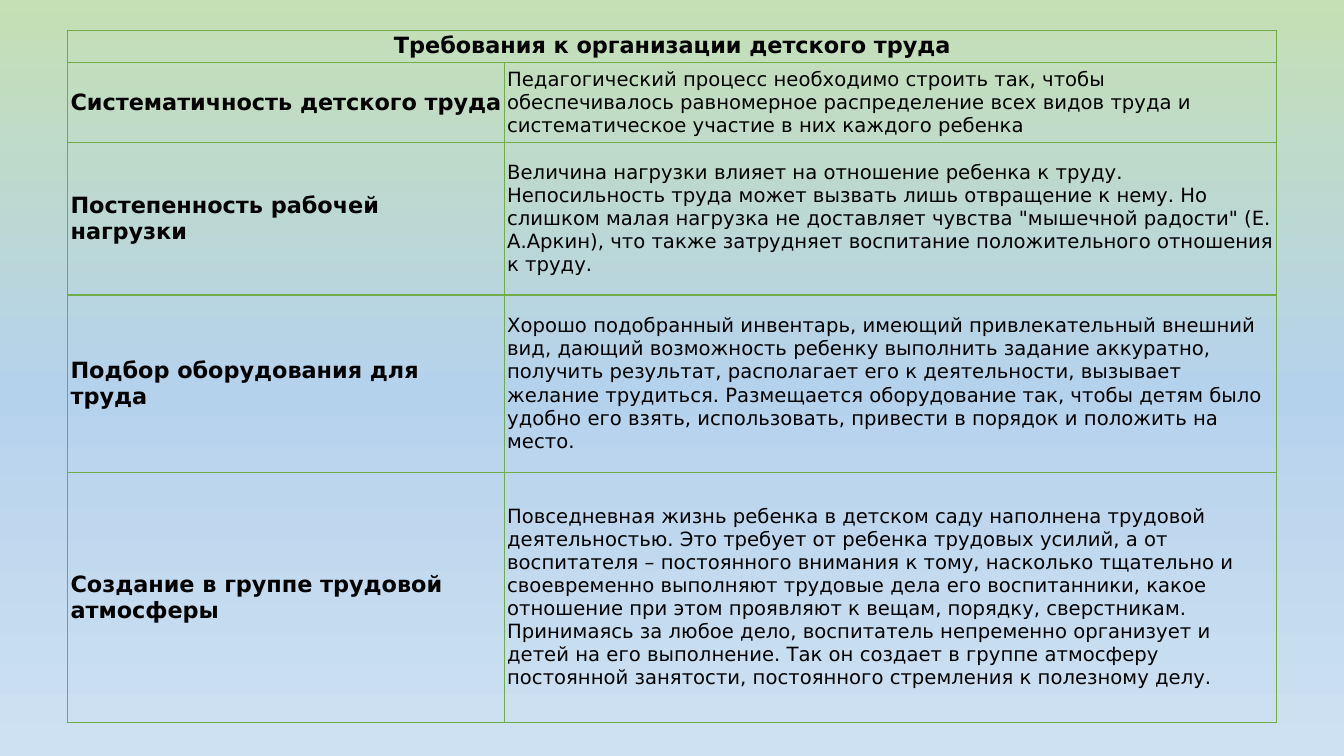
from copy import deepcopy

from pptx import Presentation
from pptx.dml.color import RGBColor
from pptx.enum.text import MSO_ANCHOR as Anchor, PP_ALIGN as Align
from pptx.oxml.ns import qn
from pptx.util import Inches, Pt
from lxml.etree import SubElement

FONT = "DejaVu Sans"
BORDER = "70AD47"
BACKGROUND = [(0, "C5E0B4"), (0.51, "B5D2EC"), (1, "CEE1F2")]
COLUMN_WIDTHS = [4.33, 7.66]
ROW_HEIGHTS = [0.31, 0.8, 1.51, 1.76, 2.48]

TITLE = "Требования к организации детского труда"
REQUIREMENTS = [
    ("Систематичность детского труда",
     "Педагогический процесс необходимо строить так, чтобы обеспечивалось "
     "равномерное распределение всех видов труда и систематическое участие "
     "в них каждого ребенка"),
    ("Постепенность рабочей нагрузки",
     "Величина нагрузки влияет на отношение ребенка к труду. Непосильность "
     "труда может вызвать лишь отвращение к нему. Но слишком малая нагрузка "
     "не доставляет чувства \"мышечной радости\" (Е. А.Аркин), что также "
     "затрудняет воспитание положительного отношения к труду."),
    ("Подбор оборудования для труда",
     "Хорошо подобранный инвентарь, имеющий привлекательный внешний вид, "
     "дающий возможность ребенку выполнить задание аккуратно, получить "
     "результат, располагает его к деятельности, вызывает желание трудиться. "
     "Размещается оборудование так, чтобы детям было удобно его взять, "
     "использовать, привести в порядок и положить на место."),
    ("Создание в группе трудовой атмосферы",
     "Повседневная жизнь ребенка в детском саду наполнена трудовой "
     "деятельностью. Это требует от ребенка трудовых усилий, а от воспитателя "
     "– постоянного внимания к тому, насколько тщательно и своевременно "
     "выполняют трудовые дела его воспитанники, какое отношение при этом "
     "проявляют к вещам, порядку, сверстникам. Принимаясь за любое дело, "
     "воспитатель непременно организует и детей на его выполнение. Так он "
     "создает в группе атмосферу постоянной занятости, постоянного стремления "
     "к полезному делу."),
]


def color(value):
    return RGBColor.from_string(value)


def paint_background(page):
    fill = page.background.fill
    fill.gradient()
    fill.gradient_angle = 270  # counter-clockwise, so top to bottom
    stop_list = page.element.find(".//" + qn("a:gsLst"))
    stop_list.append(deepcopy(stop_list[0]))
    for stop, (position, value) in zip(fill.gradient_stops, BACKGROUND):
        stop.position = position
        stop.color.rgb = color(value)


def write_text(cell, text, size=14, bold=False, align=Align.LEFT):
    para = cell.text_frame.paragraphs[0]
    para.alignment = align
    span = para.add_run()
    span.text = text
    span.font.name = FONT
    span.font.size = Pt(size)
    span.font.bold = bold
    span.font.color.rgb = color("000000")


def format_cell(cell):
    cell.vertical_anchor = Anchor.MIDDLE
    cell.margin_left = cell.margin_top = cell.margin_bottom = Inches(0.03)
    cell.margin_right = Inches(0.02)
    # Borders come before the fill in the cell properties
    properties = cell._tc.get_or_add_tcPr()
    for side in ("a:lnL", "a:lnR", "a:lnT", "a:lnB"):
        line = SubElement(properties, qn(side), w=str(Pt(1)))
        solid = SubElement(line, qn("a:solidFill"))
        SubElement(solid, qn("a:srgbClr"), val=BORDER)
    cell.fill.background()


def add_requirements_table(page):
    frame = page.shapes.add_table(
        len(ROW_HEIGHTS), len(COLUMN_WIDTHS), Inches(0.67), Inches(0.3),
        Inches(sum(COLUMN_WIDTHS)), Inches(sum(ROW_HEIGHTS)))
    table = frame.table
    table.first_row = table.horz_banding = False
    for column, width in zip(table.columns, COLUMN_WIDTHS):
        column.width = Inches(width)
    for row, height in zip(table.rows, ROW_HEIGHTS):
        row.height = Inches(height)
        for cell in row.cells:
            format_cell(cell)

    # Title across both columns
    title = table.cell(0, 0)
    title.merge(table.cell(0, 1))
    write_text(title, TITLE, size=16, bold=True, align=Align.CENTER)

    # One requirement a row
    for index, (name, description) in enumerate(REQUIREMENTS, start=1):
        write_text(table.cell(index, 0), name, size=16, bold=True)
        write_text(table.cell(index, 1), description)


def main():
    deck = Presentation()
    deck.slide_width, deck.slide_height = Inches(13.33), Inches(7.5)
    page = deck.slides.add_slide(deck.slide_layouts[6])
    paint_background(page)
    add_requirements_table(page)
    deck.save("out.pptx")


if __name__ == "__main__":
    main()
